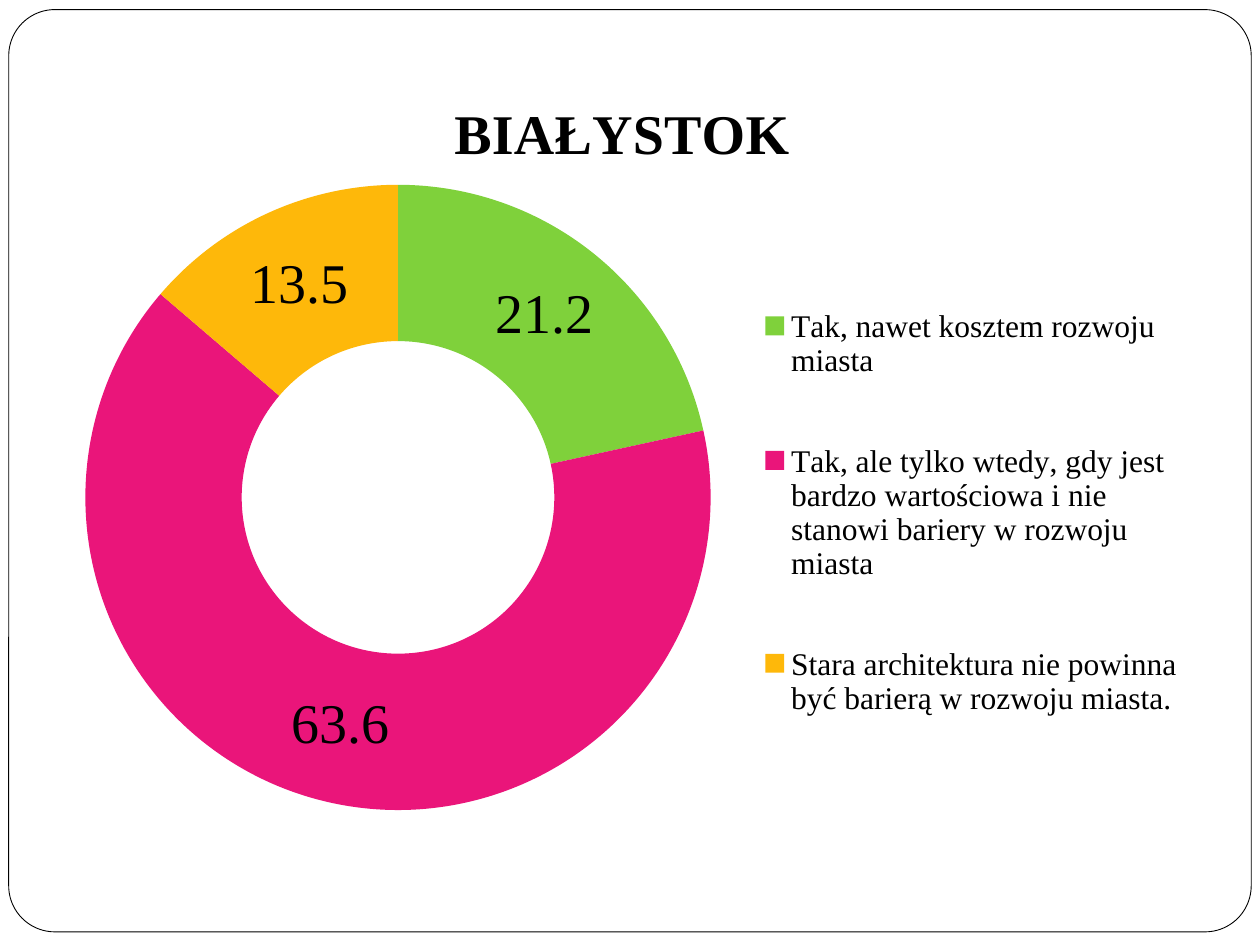
"""Build a slide with a doughnut chart of opinions in Białystok."""
from dataclasses import dataclass

from lxml import etree
from pptx import Presentation
from pptx import util as u
from pptx.chart import data
from pptx.dml import color
from pptx.enum import chart as ch
from pptx.enum import shapes
from pptx.oxml import ns


@dataclass(frozen=True)
class Theme:
    ink: color.RGBColor = color.RGBColor.from_string("000000")
    paper: color.RGBColor = color.RGBColor.from_string("FFFFFF")
    slices: tuple = ("7FD13B", "EA157A", "FEB80A")
    font: str = "Times New Roman"
    heading: u.Pt = u.Pt(32)
    legend: u.Pt = u.Pt(18)
    base: u.Pt = u.Pt(10)


def style(font, size, bold=False):
    font.name, font.size, font.bold = theme.font, size, bold
    font.color.rgb = theme.ink


def place(part, index, modes, box):
    for old in part.findall(ns.qn("c:layout")):
        part.remove(old)
    layout = etree.Element(ns.qn("c:layout"))
    manual = etree.SubElement(layout, ns.qn("c:manualLayout"))
    for tag, value in {**modes, **box}.items():
        etree.SubElement(manual, ns.qn(f"c:{tag}")).set("val", str(value))
    part.insert(index, layout)


theme = Theme()
prs = Presentation()
prs.slide_width, prs.slide_height = u.Pt(720), u.Pt(540)
slide = prs.slides.add_slide(prs.slide_layouts[6])

frame = slide.shapes.add_shape(
    shapes.MSO_SHAPE.ROUNDED_RECTANGLE, u.Pt(5), u.Pt(5.5), u.Pt(710), u.Pt(527)
)
frame.adjustments[0] = 0.05
frame.shadow.inherit = False
frame.fill.solid()
frame.fill.fore_color.rgb = theme.paper
frame.line.color.rgb = theme.ink
frame.line.width = u.Pt(0.5)

answers = data.CategoryChartData(number_format="0.0")
answers.categories = [
    "Tak, nawet kosztem rozwoju miasta",
    "Tak, ale tylko wtedy, gdy jest bardzo wartościowa i nie stanowi bariery w rozwoju miasta",
    "Stara architektura nie powinna być barierą w rozwoju miasta.",
]
answers.add_series("BIAŁYSTOK", (21.2, 63.6, 13.5))
doughnut = slide.shapes.add_chart(
    ch.XL_CHART_TYPE.DOUGHNUT, u.Pt(22.3), u.Pt(28), u.Pt(661.7), u.Pt(445.7), answers
).chart
style(doughnut.font, theme.base)

doughnut.has_title = True
heading = doughnut.chart_title.text_frame.paragraphs[0].add_run()
heading.text = "BIAŁYSTOK"
style(heading.font, theme.heading, bold=True)
doughnut.chart_title.include_in_layout = False

doughnut.has_legend = True
doughnut.legend.position = ch.XL_LEGEND_POSITION.RIGHT
doughnut.legend.include_in_layout = False
style(doughnut.legend.font, theme.legend)

plot = doughnut.plots[0]
plot.vary_by_categories = True
plot.has_data_labels = True
labels = plot.data_labels
labels.show_value, labels.show_percentage = True, False
labels.number_format, labels.number_format_is_linked = "0.0", False
style(labels.font, theme.heading)
for index, shade in enumerate(theme.slices):
    fill = plot.series[0].points[index].format.fill
    fill.solid()
    fill.fore_color.rgb = color.RGBColor.from_string(shade)

edges = {"xMode": "edge", "yMode": "edge"}
root = doughnut.element.find(ns.qn("c:chart"))
place(root.find(ns.qn("c:title")), 1, edges, {"x": 0.35, "y": 0.05})
place(
    root.find(ns.qn("c:plotArea")), 0, {"layoutTarget": "inner", **edges},
    {"x": 0.04, "y": 0.17, "w": 0.54, "h": 0.81},
)
place(
    root.find(ns.qn("c:legend")), 1, edges,
    {"x": 0.62, "y": 0.25, "w": 0.37, "h": 0.69},
)

prs.save("out.pptx")
